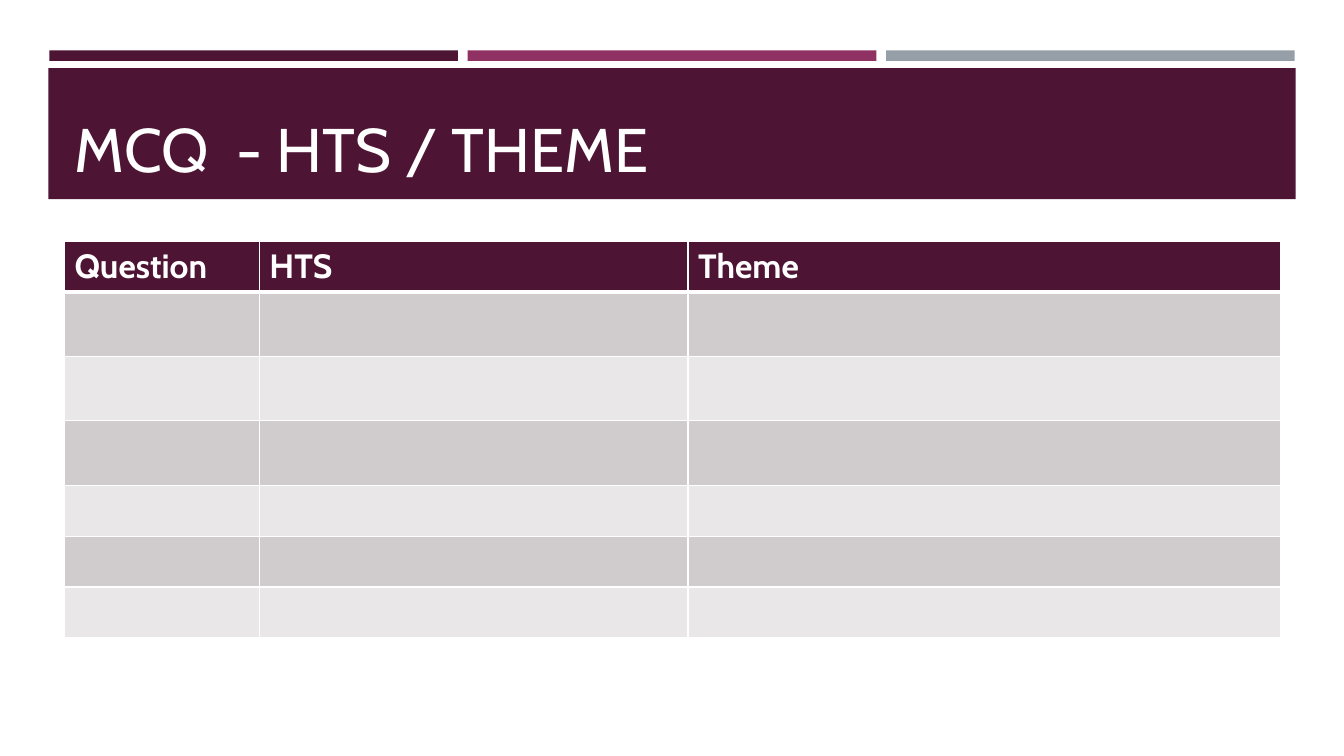
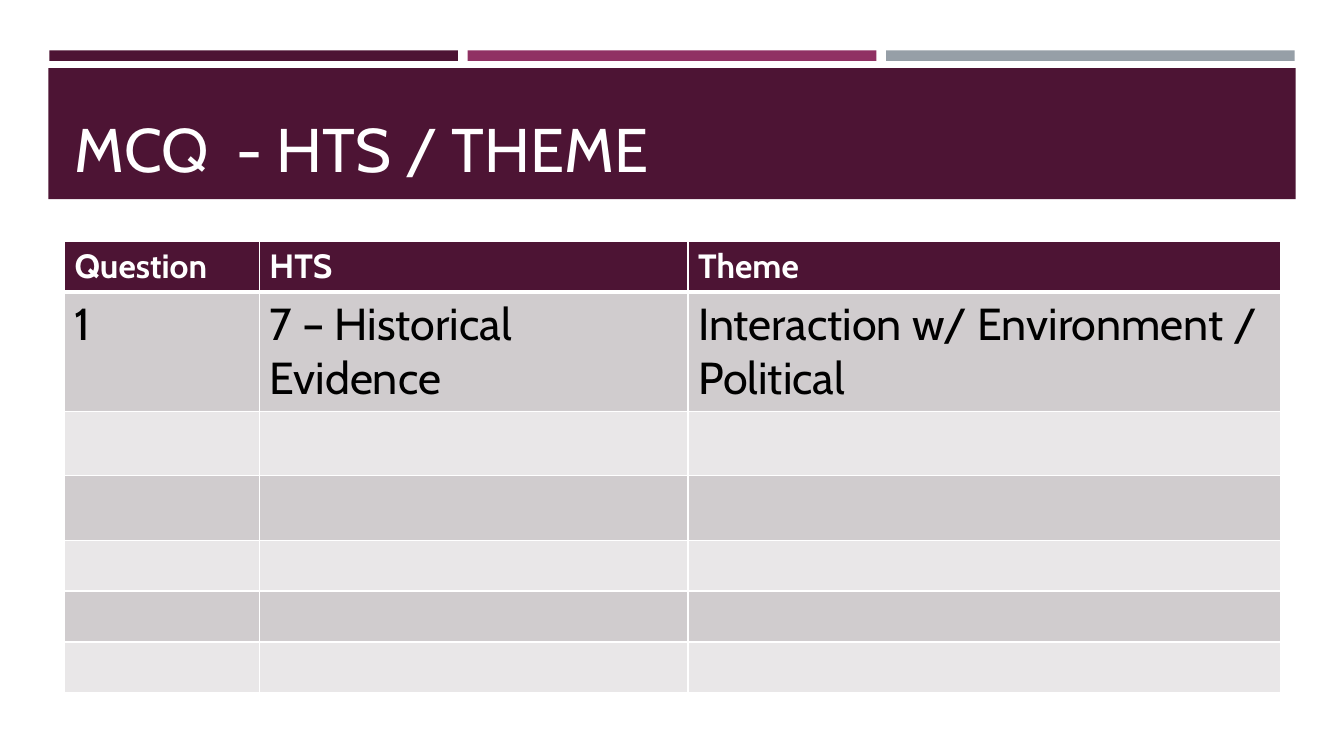
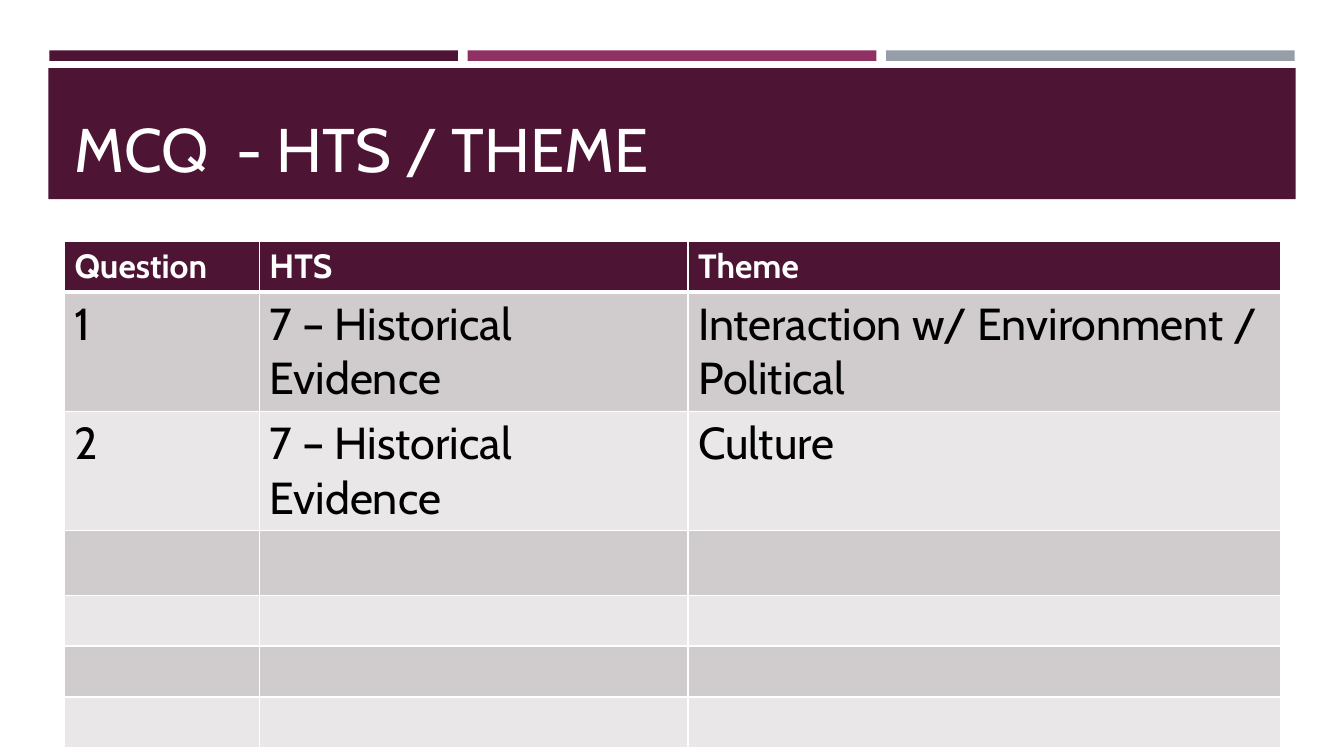
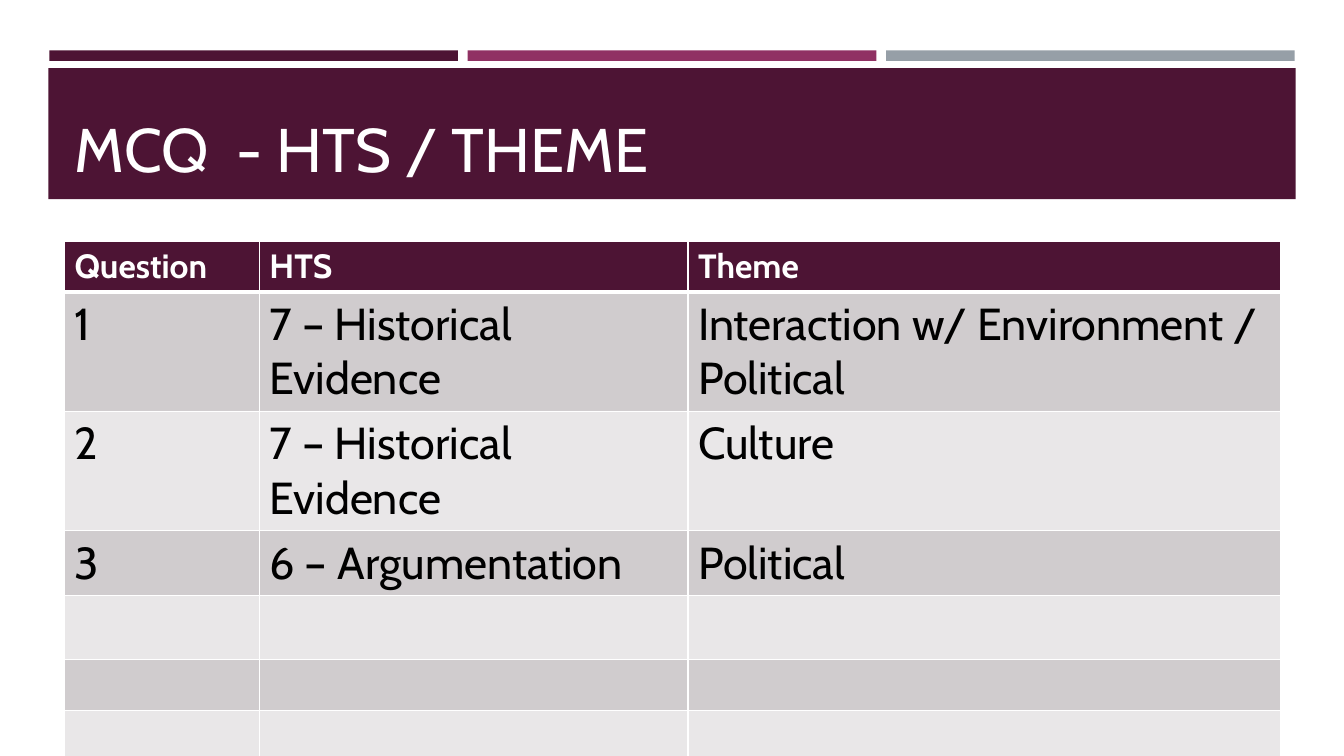
import dataclasses

import lxml.etree
import pptx
import pptx.dml.color
import pptx.enum.shapes
import pptx.enum.text
import pptx.oxml.ns
import pptx.util


@dataclasses.dataclass(frozen=True)
class Theme:
    font: str = "Cabin"
    plum: str = "4D1434"
    berry: str = "903163"
    slate: str = "969FA7"
    white: str = "FFFFFF"
    black: str = "000000"
    stripes: tuple = ("D0CCCE", "E9E7E8")
    title_size: int = 44
    head_size: int = 24
    body_size: int = 32
    thin: int = 1
    thick: int = 3


TITLE = "MCQ  - HTS / THEME"
HEADS = ("Question", "HTS", "Theme")
ANSWERS = (
    ("1", "7 – Historical Evidence", "Interaction w/ Environment / Political"),
    ("2", "7 – Historical Evidence", "Culture"),
    ("3", "6 – Argumentation", "Political"),
)
ANSWER_HEIGHTS = (15.8, 15.8, 8.53)
HEAD_HEIGHT, ROOMY, COMPACT = 6.67, 8.53, 6.73
COLUMN_WIDTHS = (14.5, 31.9, 44.1)
BLANK = ("",) * len(HEADS)
BODY_ROWS = 6
MARGIN = 4.8


class Deck:
    def __init__(self, theme):
        self.theme = theme
        self.prs = pptx.Presentation()
        self.prs.slide_width = pptx.util.Inches(13.33)
        self.prs.slide_height = pptx.util.Inches(7.5)
        self.layout = self.prs.slide_layouts.get_by_name("Title Only")
        self.s = None

    def x(self, share):
        return round(self.prs.slide_width * share / 100)

    def y(self, share):
        return round(self.prs.slide_height * share / 100)

    def box(self, left, top, width, height):
        return self.x(left), self.y(top), self.x(width), self.y(height)

    def rgb(self, color):
        return pptx.dml.color.RGBColor.from_string(color)

    def slide(self):
        first = self.s is None
        self.s = self.prs.slides.add_slide(self.layout)
        if first:
            self.masthead()

    def masthead(self):
        t = self.theme
        for i, color in enumerate((t.plum, t.berry, t.slate)):
            self.layout_bar(3.67 + i * 31.13, 6.67, 30.4, 1.4, color)
        self.layout_bar(3.6, 9, 92.8, 17.33, t.plum)

    def layout_bar(self, left, top, width, height, color):
        sp = self.s.shapes.add_shape(
            pptx.enum.shapes.MSO_SHAPE.RECTANGLE, *self.box(left, top, width, height))
        sp.shadow.inherit = False
        sp.fill.solid()
        sp.fill.fore_color.rgb = self.rgb(color)
        sp.line.fill.background()
        self.layout.shapes._spTree.append(sp._element)

    def text(self, tf, words, size, color, bold=False):
        p = tf.paragraphs[0]
        p.alignment = pptx.enum.text.PP_ALIGN.LEFT
        r = p.add_run()
        r.text = words
        style = {"name": self.theme.font, "size": pptx.util.Pt(size), "bold": bold}
        for key, value in style.items():
            setattr(r.font, key, value)
        r.font.color.rgb = self.rgb(color)

    def title(self, words):
        sp = self.s.shapes.title
        frame = zip(("left", "top", "width", "height"), self.box(MARGIN, 10.27, 90.5, 14.8))
        for key, value in frame:
            setattr(sp, key, value)
        sp.text_frame.vertical_anchor = pptx.enum.text.MSO_ANCHOR.BOTTOM
        self.text(sp.text_frame, words, self.theme.title_size, self.theme.white)

    def borders(self, cell, widths):
        tc_pr = cell._tc.get_or_add_tcPr()
        qn = pptx.oxml.ns.qn
        for i, (side, width) in enumerate(widths.items()):
            ln = lxml.etree.Element(qn(f"a:ln{side}"), w=str(pptx.util.Pt(width)))
            fill = lxml.etree.SubElement(ln, qn("a:solidFill"))
            lxml.etree.SubElement(fill, qn("a:srgbClr"), val=self.theme.white)
            tc_pr.insert(i, ln)

    def table(self, rows, heights):
        t = self.theme
        table = self.s.shapes.add_table(
            len(rows), len(HEADS),
            *self.box(MARGIN, 31.87, sum(COLUMN_WIDTHS), sum(heights))).table
        table.horz_banding = False
        for column, width in zip(table.columns, COLUMN_WIDTHS):
            column.width = self.x(width)
        for i, (words, height) in enumerate(zip(rows, heights)):
            table.rows[i].height = self.y(height)
            head = i == 0
            look = (t.head_size, t.white, True) if head else (t.body_size, t.black)
            widths = {"L": t.thin, "R": t.thin,
                      "T": t.thick if i == 1 else t.thin,
                      "B": t.thick if head else t.thin}
            for j, word in enumerate(words):
                cell = table.cell(i, j)
                cell.fill.solid()
                cell.fill.fore_color.rgb = self.rgb(t.plum if head else t.stripes[(i - 1) % 2])
                self.borders(cell, widths)
                if word:
                    self.text(cell.text_frame, word, *look)


def main():
    deck = Deck(Theme())
    for shown in range(len(ANSWERS) + 1):
        blanks = BODY_ROWS - shown
        roomy = max(3, shown + 1) - shown
        deck.slide()
        deck.title(TITLE)
        deck.table(
            (HEADS, *ANSWERS[:shown], *[BLANK] * blanks),
            (HEAD_HEIGHT, *ANSWER_HEIGHTS[:shown],
             *[ROOMY] * roomy, *[COMPACT] * (blanks - roomy)))
    deck.prs.save("out.pptx")


if __name__ == "__main__":
    main()
